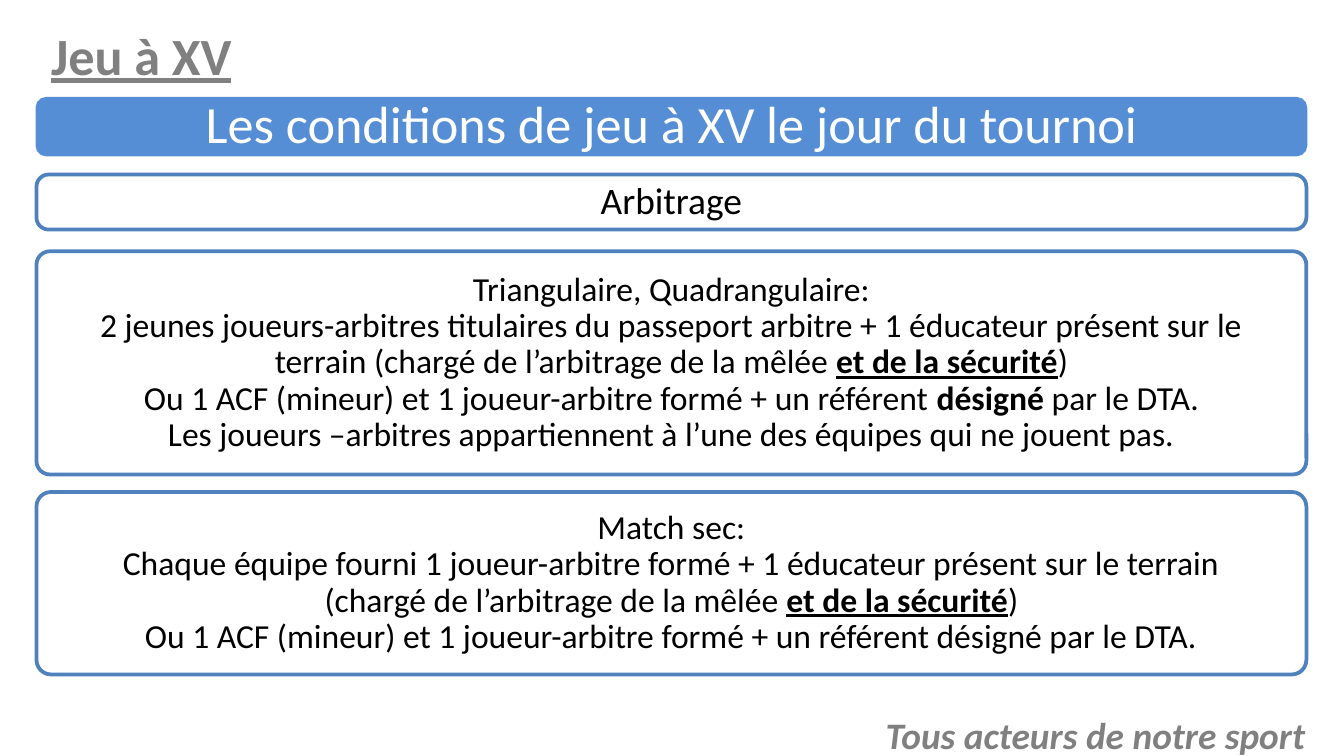
from pptx import Presentation
from pptx.dml.color import RGBColor
from pptx.enum.shapes import MSO_SHAPE
from pptx.enum.text import MSO_ANCHOR, MSO_AUTO_SIZE, PP_ALIGN
from pptx.util import Cm, Pt

WHITE = RGBColor(0xFF, 0xFF, 0xFF)
BLACK = RGBColor(0x00, 0x00, 0x00)
GREY = RGBColor(0x80, 0x80, 0x80)
BORDER_BLUE = RGBColor(0x4F, 0x81, 0xBD)
BANNER_BLUE = RGBColor(0x55, 0x8E, 0xD5)

FONT = "Calibri"
LEFT, WIDTH = Cm(0.69), Cm(24)
INSET = Cm(0.2)

# Each line is a list of (text, style) spans; style letters: b, i, u
SAFETY = ("et de la sécurité", "bu")
TOURNAMENT_RULES = [
    [("Triangulaire, Quadrangulaire:", "")],
    [("2 jeunes joueurs-arbitres titulaires du passeport arbitre + 1 éducateur "
      "présent sur le terrain (chargé de l’arbitrage de la mêlée ", ""),
     SAFETY, (")", "")],
    [("Ou 1 ACF (mineur) et 1 joueur-arbitre formé + un référent ", ""),
     ("désigné", "b"), (" par le DTA.", "")],
    [("Les joueurs –arbitres appartiennent à l’une des équipes qui ne jouent pas.", "")],
]
SINGLE_MATCH_RULES = [
    [("Match sec:", "")],
    [("Chaque équipe fourni 1 joueur-arbitre formé + 1 éducateur présent sur le terrain", "")],
    [("(chargé de l’arbitrage de la mêlée ", ""), SAFETY, (")", "")],
    [("Ou 1 ACF (mineur) et 1 joueur-arbitre formé + un référent désigné par le DTA.", "")],
]


def write_lines(frame, lines, size, color, align, spacing=1.0):
    """Write one paragraph per line, span by span."""
    frame.word_wrap = True
    for index, line in enumerate(lines):
        para = frame.add_paragraph() if index else frame.paragraphs[0]
        para.alignment = align
        para.line_spacing = spacing
        for text, style in line:
            span = para.add_run()
            span.text = text
            span.font.name = FONT
            span.font.size = Pt(size)
            span.font.color.rgb = color
            span.font.bold = "b" in style
            span.font.italic = "i" in style
            span.font.underline = "u" in style


def add_panel(page, top, height, corner, lines, size,
              fill=WHITE, border=BORDER_BLUE, border_width=2, color=BLACK):
    """Add a full-width rounded panel with centred text."""
    box = page.shapes.add_shape(MSO_SHAPE.ROUNDED_RECTANGLE, LEFT, Cm(top), WIDTH, Cm(height))
    box.adjustments[0] = corner
    box.shadow.inherit = False
    box.fill.solid()
    box.fill.fore_color.rgb = fill
    box.line.color.rgb = border
    box.line.width = Pt(border_width)
    frame = box.text_frame
    frame.vertical_anchor = MSO_ANCHOR.MIDDLE
    frame.margin_left = frame.margin_right = INSET
    frame.margin_top = frame.margin_bottom = INSET
    write_lines(frame, lines, size, color, PP_ALIGN.CENTER, 0.9)


def set_title(page, text):
    """Place and format the title placeholder."""
    box = page.shapes.title
    box.left, box.top, box.width, box.height = Cm(0.71), Cm(0.36), WIDTH, Cm(1.35)
    frame = box.text_frame
    frame.auto_size = MSO_AUTO_SIZE.NONE
    frame.vertical_anchor = MSO_ANCHOR.MIDDLE
    write_lines(frame, [[(text, "bu")]], 28, GREY, PP_ALIGN.LEFT)


def add_motto(page, text):
    """Add the motto at the bottom right."""
    box = page.shapes.add_textbox(Cm(16.31), Cm(13.34), Cm(8.79), Cm(0.94))
    write_lines(box.text_frame, [[(text, "bi")]], 20, GREY, PP_ALIGN.CENTER)


def main():
    deck = Presentation()
    deck.slide_width, deck.slide_height = Cm(25.4), Cm(14.29)
    page = deck.slides.add_slide(deck.slide_layouts[5])

    # Heading and banner
    set_title(page, "Jeu à XV")
    add_panel(page, 1.85, 1.09, 0.17,
              [[("Les conditions de jeu à XV le jour du tournoi", "")]], 28,
              fill=BANNER_BLUE, border=BANNER_BLUE, border_width=1, color=WHITE)

    # Refereeing panels
    add_panel(page, 3.3, 1.04, 0.22, [[("Arbitrage", "")]], 20)
    add_panel(page, 4.75, 4.22, 0.06, TOURNAMENT_RULES, 18)
    add_panel(page, 9.3, 3.45, 0.08, SINGLE_MATCH_RULES, 18)

    # Footer
    add_motto(page, "Tous acteurs de notre sport")
    deck.save("out.pptx")


if __name__ == "__main__":
    main()
